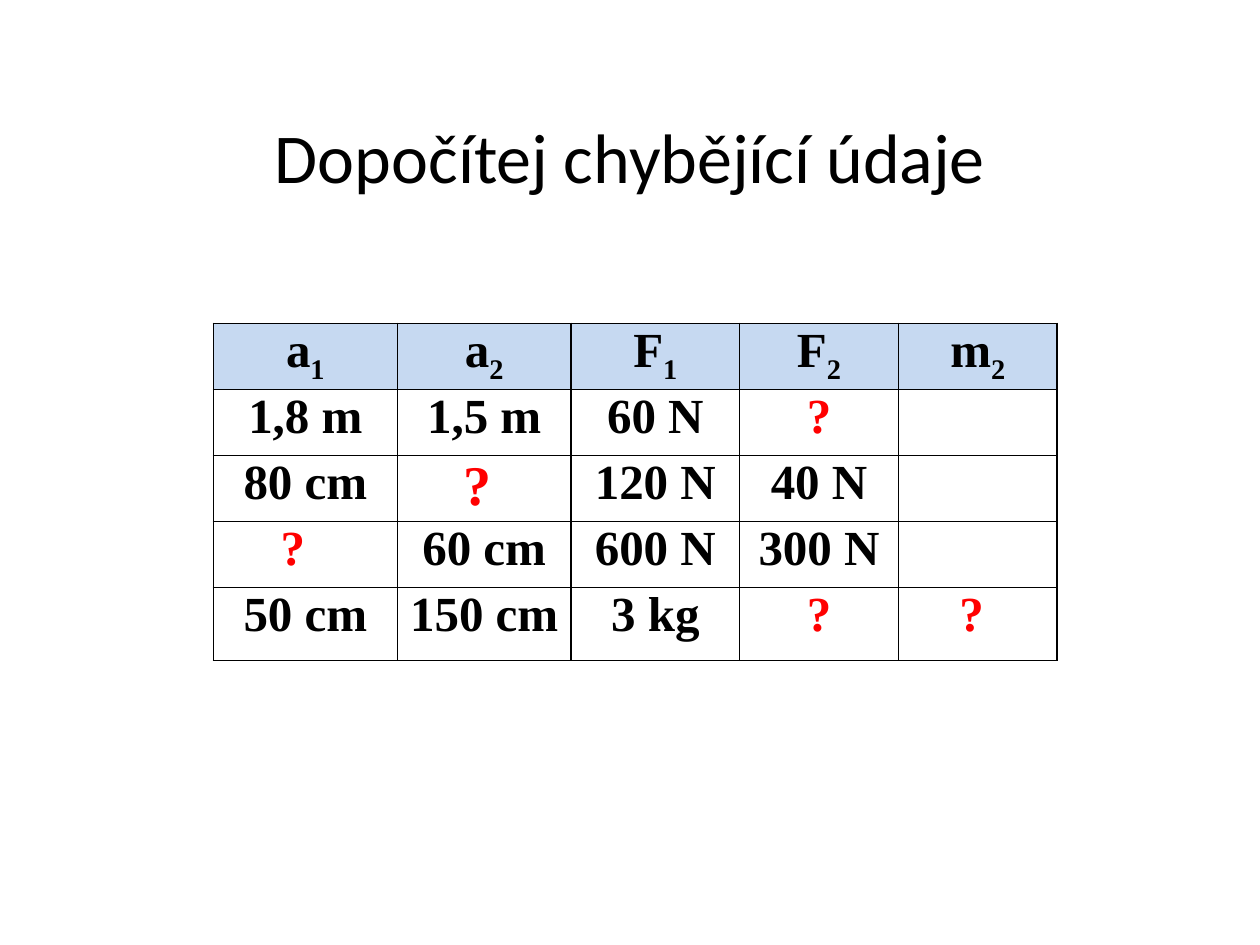
import pptx
import pptx.dml.color
import pptx.enum.text
import pptx.oxml
import pptx.oxml.ns
import pptx.util
from pptx.util import Cm

BLACK, RED, WHITE, HEADER_BLUE = "000000", "FF0000", "FFFFFF", "C6D9F1"
TABLE_FONT = "Times New Roman"
COLUMN_WIDTHS = [3.71, 3.5, 3.4, 3.2, 3.2]
ROW_HEIGHTS = [1.33, 1.33, 1.33, 1.33, 1.47]
HEADERS = ["a1", "a2", "F1", "F2", "m2"]
ROWS = [
    ["1,8 m", "1,5 m", "60 N", "?", ""],
    ["80 cm", "?", "120 N", "40 N", ""],
    ["?", "60 cm", "600 N", "300 N", ""],
    ["50 cm", "150 cm", "3 kg", "?", "?"],
]
CELL_MARGIN = 0.19
# Extra right margin in cm for question marks set left of centre: (row, column)
RIGHT_INDENTS = {(2, 1): 0.28, (3, 0): 0.5, (4, 4): 0.25}
LARGE_CELL = (2, 1)


def color(hex_value):
    return pptx.dml.color.RGBColor.from_string(hex_value)


def add_run(paragraph, text, font_name, size, hex_color, bold=False, baseline=None):
    run = paragraph.add_run()
    run.text = text
    run.font.name = font_name
    run.font.size = pptx.util.Pt(size)
    run.font.bold = bold
    run.font.color.rgb = color(hex_color)
    if baseline is not None:
        run.font._element.set("baseline", str(baseline))


def set_title(slide, text):
    title = slide.shapes.title
    title.left, title.top = Cm(1.27), Cm(1.55)
    title.width, title.height = Cm(22.86), Cm(3.18)
    title.text_frame.vertical_anchor = pptx.enum.text.MSO_ANCHOR.MIDDLE
    paragraph = title.text_frame.paragraphs[0]
    paragraph.alignment = pptx.enum.text.PP_ALIGN.CENTER
    add_run(paragraph, text, "Calibri", 40, BLACK)


def set_borders(cell, hex_color, width):
    properties = cell._tc.get_or_add_tcPr()
    for position, side in enumerate(["lnL", "lnR", "lnT", "lnB"]):
        border = pptx.oxml.parse_xml(
            f'<a:{side} {pptx.oxml.ns.nsdecls("a")} w="{pptx.util.Pt(width)}">'
            f'<a:solidFill><a:srgbClr val="{hex_color}"/></a:solidFill></a:{side}>'
        )
        properties.insert(position, border)


def format_cell(cell, fill_color, right_indent):
    cell.margin_left = Cm(CELL_MARGIN)
    cell.margin_right = Cm(CELL_MARGIN + right_indent)
    cell.margin_top = cell.margin_bottom = 0
    cell.fill.solid()
    cell.fill.fore_color.rgb = color(fill_color)
    set_borders(cell, BLACK, 1)
    paragraph = cell.text_frame.paragraphs[0]
    paragraph.alignment = pptx.enum.text.PP_ALIGN.CENTER
    return paragraph


def add_data_table(slide):
    frame = slide.shapes.add_table(
        len(ROW_HEIGHTS), len(COLUMN_WIDTHS), Cm(4.3), Cm(6.52),
        Cm(sum(COLUMN_WIDTHS)), Cm(sum(ROW_HEIGHTS)))
    table = frame.table
    table.horz_banding = False
    for column, width in zip(table.columns, COLUMN_WIDTHS):
        column.width = Cm(width)
    for row, height in zip(table.rows, ROW_HEIGHTS):
        row.height = Cm(height)

    # Header symbols with subscript index
    for column_index, (letter, index) in enumerate(HEADERS):
        paragraph = format_cell(table.cell(0, column_index), HEADER_BLUE, 0)
        add_run(paragraph, letter, TABLE_FONT, 28, BLACK, bold=True)
        add_run(paragraph, index, TABLE_FONT, 28, BLACK, bold=True, baseline=-25000)

    # Values, with missing ones in red
    for row_index, values in enumerate(ROWS, start=1):
        for column_index, value in enumerate(values):
            place = (row_index, column_index)
            paragraph = format_cell(table.cell(*place), WHITE, RIGHT_INDENTS.get(place, 0))
            if value:
                size = 32 if place == LARGE_CELL else 28
                text_color = RED if value == "?" else BLACK
                add_run(paragraph, value, TABLE_FONT, size, text_color, bold=True)


def main():
    presentation = pptx.Presentation()
    presentation.slide_width, presentation.slide_height = Cm(25.4), Cm(19.05)
    slide = presentation.slides.add_slide(presentation.slide_layouts[5])
    set_title(slide, "Dopočítej chybějící údaje")
    add_data_table(slide)
    presentation.save("out.pptx")


if __name__ == "__main__":
    main()
